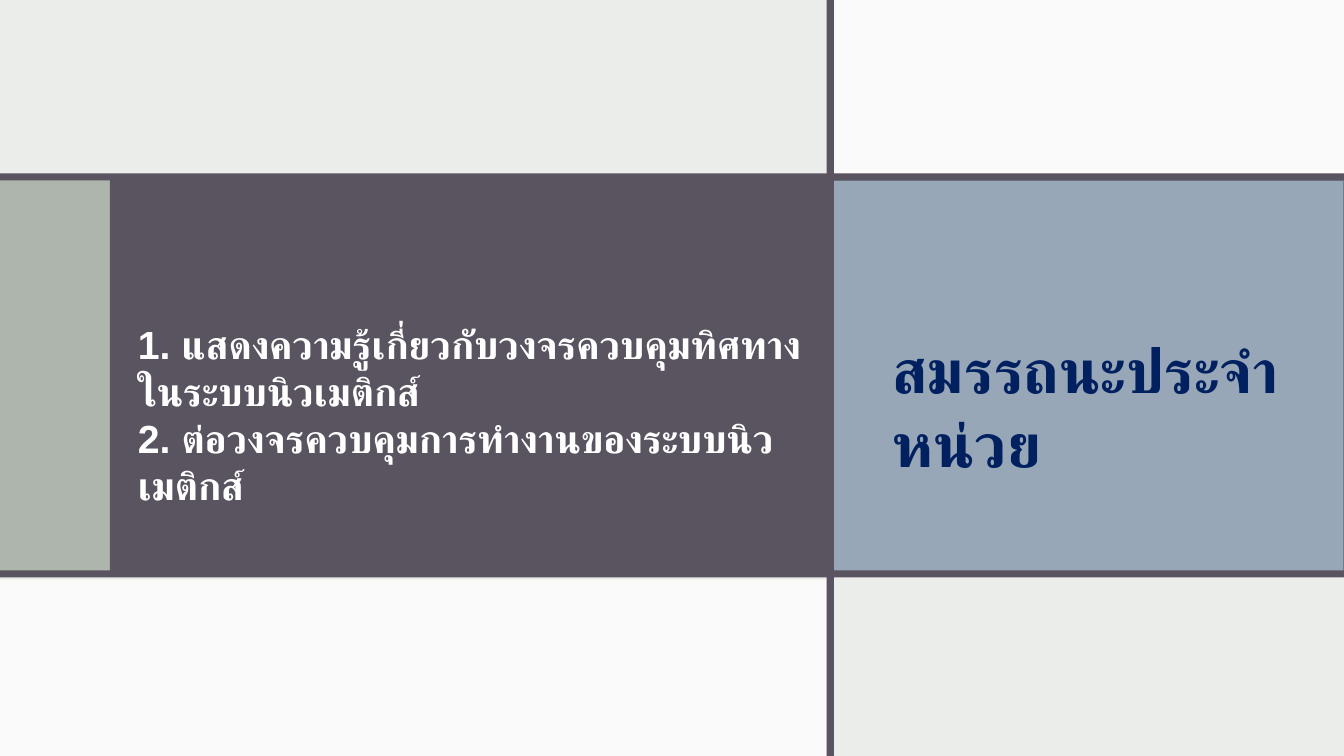
from lxml.etree import SubElement
from pptx import Presentation
from pptx.dml.color import RGBColor
from pptx.enum.shapes import MSO_SHAPE
from pptx.enum.text import MSO_ANCHOR, MSO_AUTO_SIZE, PP_ALIGN
from pptx.oxml.ns import qn
from pptx.util import Inches, Pt

# Content
TITLE = "สมรรถนะประจำหน่วย"
SKILLS = [
    "1. แสดงความรู้เกี่ยวกับวงจรควบคุมทิศทางในระบบนิวเมติกส์",
    "2. ต่อวงจรควบคุมการทำงานของระบบนิวเมติกส์",
]


class Theme:
    font = "Arial"
    back, white, sage = "EBEDEB", "FFFFFF", "ADB5AD"
    plum, blue, edge, navy = "595460", "97A7B8", "707C88", "002060"
    head, body = 44, 28


# Grid: bars of one width split the slide into cells
WIDE, HIGH, BAR = 13.33, 7.5, 0.07
COL, TOP, LOW, SIDE = 8.2, 1.72, 5.66, 1.09
RIGHT, MID = COL + BAR, TOP + BAR
BAND = (TOP + 0.05, LOW - TOP - 0.03)

# Left, top, width, height, fill, opacity in percent, line
PANELS = [
    (RIGHT, 0, WIDE - RIGHT, TOP, Theme.white, 75, None),
    (0, BAND[0], SIDE, BAND[1], Theme.sage, 100, None),
    (SIDE, BAND[0], COL + 0.05 - SIDE, BAND[1], Theme.plum, 100, None),
    (RIGHT, MID, WIDE - RIGHT, LOW + 0.01 - MID, Theme.blue, 100, Theme.edge),
    (0, TOP, WIDE, BAR, Theme.plum, 100, None),
    (0, HIGH - 1.75, COL, 1.75, Theme.white, 75, None),
    (COL, 0, BAR, HIGH, Theme.plum, 100, None),
    (0, LOW, WIDE, BAR, Theme.plum, 100, None),
]


def color(code):
    return RGBColor.from_string(code)


def panel(slide, left, top, wide, high, fill, alpha, line):
    box = slide.shapes.add_shape(
        MSO_SHAPE.RECTANGLE, *map(Inches, (left, top, wide, high)))
    box.shadow.inherit = False
    box.fill.solid()
    box.fill.fore_color.rgb = color(fill)
    if alpha < 100:
        tone = box.fill._xPr.find(".//" + qn("a:srgbClr"))
        SubElement(tone, qn("a:alpha"), val=str(alpha * 1000))
    if line:
        box.line.color.rgb = color(line)
        box.line.width = Pt(1)
    else:
        box.line.fill.background()


def write(box, text, *, size, tint, bold=True):
    frame = box.text_frame
    frame.word_wrap = True
    frame.auto_size = MSO_AUTO_SIZE.SHAPE_TO_FIT_TEXT
    frame.vertical_anchor = MSO_ANCHOR.TOP
    para = frame.paragraphs[0]
    para.text = text
    para.alignment = PP_ALIGN.LEFT
    para.line_spacing = 1.0
    for run in para.runs:
        font = run.font
        font.name, font.size, font.bold = Theme.font, Pt(size), bold
        font.color.rgb = color(tint)
        # Thai text takes the complex-script font
        SubElement(run._r.get_or_add_rPr(), qn("a:cs"), typeface=Theme.font)


def main():
    deck = Presentation()
    deck.slide_width, deck.slide_height = Inches(WIDE), Inches(HIGH)
    slide = deck.slides.add_slide(deck.slide_layouts[5])
    slide.background.fill.solid()
    slide.background.fill.fore_color.rgb = color(Theme.back)

    # Panels and bars
    for item in PANELS:
        panel(slide, *item)

    # Title, raised above the panels
    title = slide.shapes.title
    title.left, title.top = Inches(8.75), Inches(3.24)
    title.width, title.height = Inches(4.07), Inches(0.84)
    write(title, TITLE, size=Theme.head, tint=Theme.navy)
    slide.shapes._spTree.append(title._element)

    # Skills
    body = slide.shapes.add_textbox(
        Inches(1.27), Inches(3.13), Inches(6.82), Inches(1.04))
    write(body, "\v".join(SKILLS), size=Theme.body, tint=Theme.white)

    deck.save("out.pptx")


if __name__ == "__main__":
    main()
